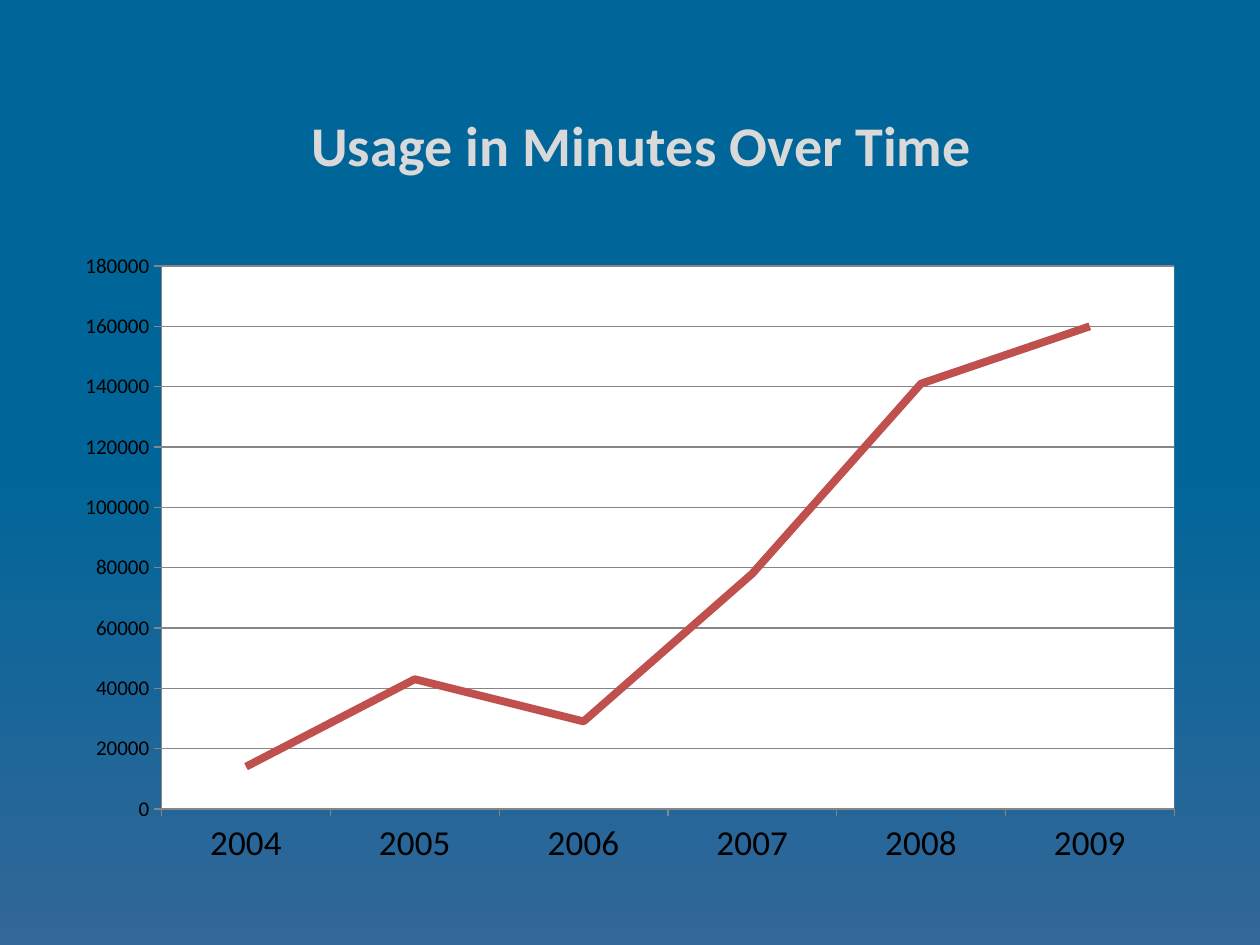
"""Build a slide with a line chart of usage in minutes by year."""
from pptx import Presentation
from pptx import util as u
from pptx.chart.data import CategoryChartData
from pptx.dml.color import RGBColor
from pptx.enum import chart as c
from pptx.oxml import parse_xml
from pptx.oxml.ns import nsdecls, qn

SCALE = u.Inches(1) / 126
COLORS = {"top": "006699", "bottom": "336699", "title": "D9D9D9", "text": "000000",
          "grid": "868686", "line": "C0504D", "plot": "FFFFFF"}
USAGE = {"2004": 14000, "2005": 43000, "2006": 29000,
         "2007": 78000, "2008": 141000, "2009": 160000}


def color(name):
    return RGBColor.from_string(COLORS[name])


def place(element, index, target="", **fractions):
    for old in element.findall(qn("c:layout")):
        element.remove(old)
    modes = "".join(f'<c:{key}Mode val="edge"/>' for key in "xy")
    values = "".join(f'<c:{key} val="{value}"/>' for key, value in fractions.items())
    element.insert(index, parse_xml(
        f'<c:layout {nsdecls("c")}><c:manualLayout>{target}{modes}{values}'
        '</c:manualLayout></c:layout>'))


deck = Presentation()
deck.slide_width, deck.slide_height = (u.Emu(round(px * SCALE)) for px in (1260, 945))
page = deck.slides.add_slide(deck.slide_layouts[6])

backdrop = page.background.fill
backdrop.gradient()
backdrop.gradient_angle = 270
for stop, position, name in zip(backdrop.gradient_stops, (0.49, 1), ("top", "bottom")):
    stop.position = position
    stop.color.rgb = color(name)

data = CategoryChartData()
data.categories = list(USAGE)
data.add_series("Series 1", list(USAGE.values()))
frame = [u.Emu(round(px * SCALE)) for px in (63, 63, 1134, 819)]
chart = page.shapes.add_chart(c.XL_CHART_TYPE.LINE, *frame, data).chart
chart.has_legend = False
chart.font.name = "Calibri"
chart.font.size = u.Pt(10)
chart.font.color.rgb = color("text")

chart.has_title = True
para = chart.chart_title.text_frame.paragraphs[0]
para.text = "Usage in Minutes Over Time"
span = para.runs[0]
span.font.name = "Calibri"
span.font.size = u.Pt(32)
span.font.bold = True
span.font.color.rgb = color("title")
place(chart.chart_title._element, 1, x=0.21, y=0.04)

axes = ((chart.category_axis, 20), (chart.value_axis, 12))
for axis, size in axes:
    axis.tick_labels.font.size = u.Pt(size)
    axis.major_tick_mark = c.XL_TICK_MARK.OUTSIDE
    axis.format.line.color.rgb = color("grid")
    axis.format.line.width = u.Pt(0.75)
chart.value_axis.minimum_scale = 0
chart.value_axis.maximum_scale = 180000
chart.value_axis.major_unit = 20000
grid = chart.value_axis.major_gridlines.format.line
grid.color.rgb = color("grid")
grid.width = u.Pt(0.75)

chart.plots[0].vary_by_categories = False
series = chart.plots[0].series[0]
series.smooth = False
series.marker.style = c.XL_MARKER_STYLE.NONE
series.format.line.color.rgb = color("line")
series.format.line.width = u.Pt(4.5)

plot_area = chart._chartSpace.find(".//" + qn("c:plotArea"))
place(plot_area, 0, '<c:layoutTarget val="inner"/>', x=0.087, y=0.248, w=0.893, h=0.663)
plot_area.append(parse_xml(
    f'<c:spPr {nsdecls("c", "a")}><a:solidFill><a:srgbClr val="{COLORS["plot"]}"/>'
    '</a:solidFill><a:ln><a:noFill/></a:ln></c:spPr>'))

deck.save("out.pptx")
